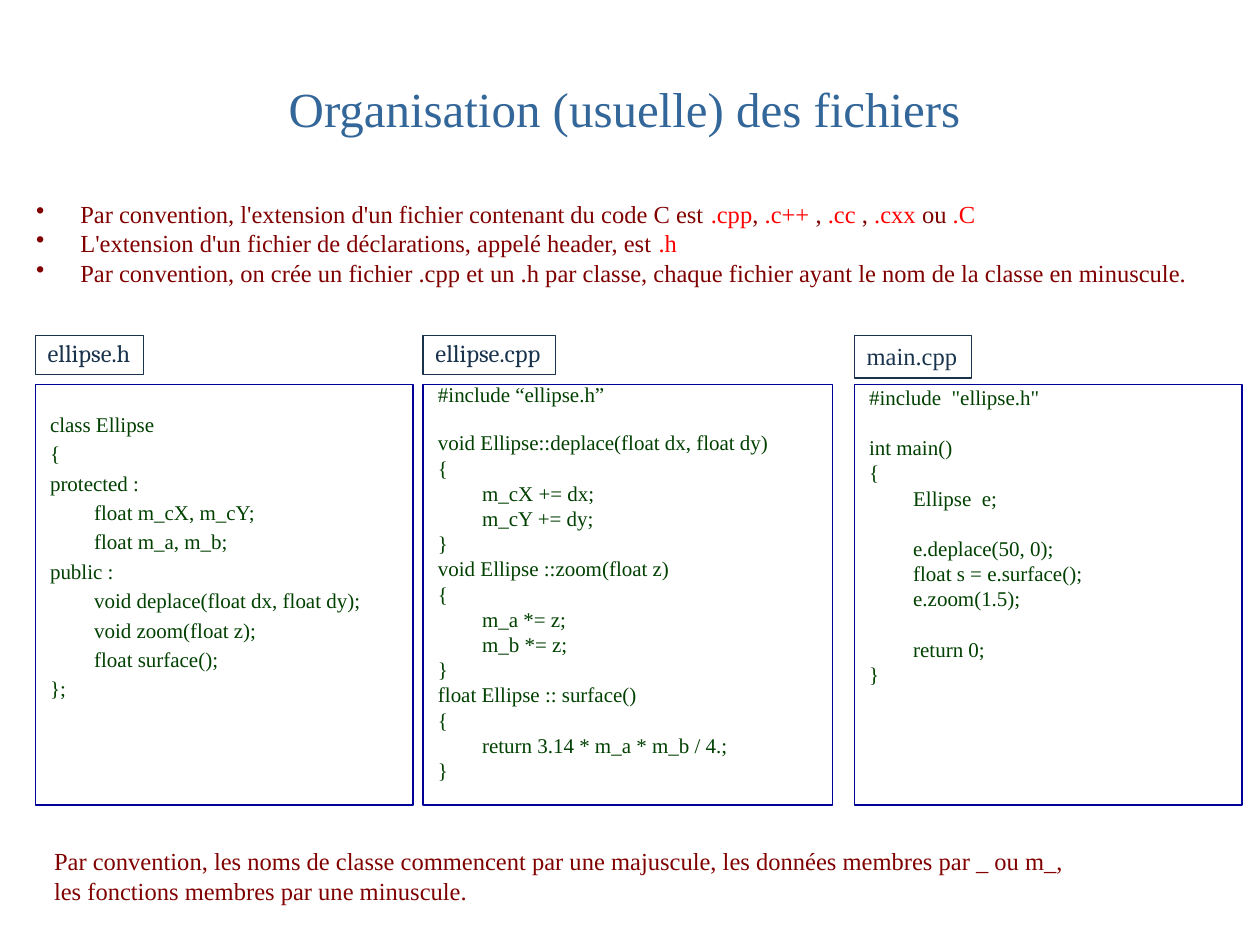
from lxml import etree
from pptx import Presentation
from pptx.dml.color import RGBColor
from pptx.enum.shapes import MSO_SHAPE
from pptx.enum.text import MSO_ANCHOR, MSO_AUTO_SIZE, PP_ALIGN
from pptx.oxml.ns import qn
from pptx.util import Cm, Pt

RECTANGLE = MSO_SHAPE.RECTANGLE
TOP, MIDDLE = MSO_ANCHOR.TOP, MSO_ANCHOR.MIDDLE
LEFT, CENTER = PP_ALIGN.LEFT, PP_ALIGN.CENTER
FIT_SHAPE = MSO_AUTO_SIZE.SHAPE_TO_FIT_TEXT

TITLE_BLUE = RGBColor(0x33, 0x66, 0x99)
MAROON = RGBColor(0x80, 0x00, 0x00)
RED = RGBColor(0xFF, 0x00, 0x00)
CODE_GREEN = RGBColor(0x00, 0x40, 0x00)
BOX_BLUE = RGBColor(0x00, 0x00, 0x99)
LABEL_NAVY = RGBColor(0x19, 0x33, 0x4D)

SERIF, LABEL_FONT = "Times New Roman", "Cambria"
INDENT, HANGING = Cm(1.19), Cm(-0.89)
NO_MARGINS = dict.fromkeys(
    ("margin_left", "margin_top", "margin_right", "margin_bottom"), 0)


def set_values(target, values):
    for name, value in values.items():
        setattr(target, name, value)


def write_paragraph(paragraph, runs, size, font=SERIF, hanging=False, bullet=False, **values):
    """Fill a paragraph with (text, colour) runs; values are paragraph attributes."""
    set_values(paragraph, {"alignment": LEFT, **values})
    for text, color in runs:
        run = paragraph.add_run()
        run.text = text
        set_values(run.font, {"name": font, "size": Pt(size)})
        run.font.color.rgb = color
    properties = paragraph._p.get_or_add_pPr()
    if hanging:
        properties.set("marL", str(INDENT))
        properties.set("indent", str(HANGING))
    if bullet:
        bullet_color = etree.SubElement(properties, qn("a:buClr"))
        etree.SubElement(bullet_color, qn("a:srgbClr"), val=str(MAROON))
        etree.SubElement(properties, qn("a:buChar"), char="•")
    if hanging:
        tabs = etree.SubElement(properties, qn("a:tabLst"))
        etree.SubElement(tabs, qn("a:tab"), pos=str(INDENT), algn="l")


presentation = Presentation()
set_values(presentation, {"slide_width": Cm(25.4), "slide_height": Cm(19.05)})
slide = presentation.slides.add_slide(presentation.slide_layouts[5])

title = slide.shapes.title
set_values(title, {"left": Cm(0.64), "top": Cm(0.43), "width": Cm(23.9), "height": Cm(3.51)})
set_values(title.text_frame, {**NO_MARGINS, "vertical_anchor": MIDDLE})
write_paragraph(title.text_frame.paragraphs[0],
                [("Organisation (usuelle) des fichiers", TITLE_BLUE)], 28, alignment=CENTER)

CONVENTIONS = [
    [("Par convention, l'extension d'un fichier contenant du code C est ", MAROON),
     (".cpp", RED), (",", MAROON), (" .c++ ", RED), (",", MAROON), (" .cc ", RED),
     (",", MAROON), (" .cxx ", RED), ("ou ", MAROON), (".C", RED)],
    [("L'extension d'un fichier de déclarations, appelé header, est ", MAROON), (".h", RED)],
    [("Par convention, on crée un fichier .cpp et un .h par classe, "
      "chaque fichier ayant le nom de la classe en minuscule.", MAROON)],
]
conventions = slide.shapes.add_textbox(Cm(0.43), Cm(4.01), Cm(24.33), Cm(1.7)).text_frame
set_values(conventions, {**NO_MARGINS, "word_wrap": True})
for index, runs in enumerate(CONVENTIONS):
    paragraph = conventions.add_paragraph() if index else conventions.paragraphs[0]
    write_paragraph(paragraph, runs, 14, hanging=True, bullet=True)

HEADER_CODE = """class Ellipse
{
protected :
\tfloat m_cX, m_cY;
\tfloat m_a, m_b;
public :
\tvoid deplace(float dx, float dy);
\tvoid zoom(float z);
\tfloat surface();
};"""
SOURCE_CODE = """#include “ellipse.h”

void Ellipse::deplace(float dx, float dy)
{
\tm_cX += dx;
\tm_cY += dy;
}
void Ellipse ::zoom(float z)
{
\tm_a *= z;
\tm_b *= z;
}
float Ellipse :: surface()
{
\treturn 3.14 * m_a * m_b / 4.;
}"""
MAIN_CODE = """#include  "ellipse.h"

int main()
{
\tEllipse  e;

\te.deplace(50, 0);
\tfloat s = e.surface();
\te.zoom(1.5);

\treturn 0;
}"""

# name, label font, label spacing, left, width, label width, label height,
# top margin, line gap, blank line, first line spacing, code
FILES = [
    ("ellipse.h", LABEL_FONT, 0.9, 0.71, 7.62, 2.18, 0.79, 0.54, 2.4, 0, 1.0, HEADER_CODE),
    ("ellipse.cpp", LABEL_FONT, 0.9, 8.53, 8.26, 2.67, 0.79, 0, 0, 13, 0.9, SOURCE_CODE),
    ("main.cpp", SERIF, 1.0, 17.22, 7.82, 2.36, 0.86, 0, 0, 14.4, 1.0, MAIN_CODE),
]
for (name, label_font, label_spacing, left, width, label_width, label_height,
     top_margin, line_gap, blank_line, first_spacing, code) in FILES:
    box = slide.shapes.add_shape(RECTANGLE, Cm(left), Cm(7.75), Cm(width), Cm(8.48))
    label = slide.shapes.add_shape(RECTANGLE, Cm(left), Cm(6.76),
                                   Cm(label_width), Cm(label_height))
    for shape, color in ((box, BOX_BLUE), (label, LABEL_NAVY)):
        shape.shadow.inherit = False
        shape.fill.background()
        shape.line.color.rgb = color
        shape.line.width = Pt(0.75)
        shape.text_frame.vertical_anchor = TOP

    set_values(label.text_frame, {"word_wrap": False, "auto_size": FIT_SHAPE})
    write_paragraph(label.text_frame.paragraphs[0], [(name, LABEL_NAVY)], 14,
                    font=label_font, line_spacing=label_spacing)

    frame = box.text_frame
    set_values(frame, {**NO_MARGINS, "margin_top": Cm(top_margin), "word_wrap": True})
    space_before, spacing = 0, first_spacing
    paragraph = frame.paragraphs[0]
    for line in code.splitlines():
        if not line:
            space_before += blank_line
            continue
        if paragraph is None:
            paragraph = frame.add_paragraph()
        write_paragraph(paragraph, [(line, CODE_GREEN)], 12, hanging=True,
                        space_before=Pt(space_before), line_spacing=spacing)
        paragraph, space_before, spacing = None, line_gap, 1.0

naming = slide.shapes.add_textbox(Cm(0.84), Cm(16.94), Cm(21.16), Cm(1.45)).text_frame
set_values(naming, {"word_wrap": True, "auto_size": FIT_SHAPE})
write_paragraph(naming.paragraphs[0],
                [("Par convention, les noms de classe commencent par une majuscule, "
                  "les données membres par _ ou m_, "
                  "les fonctions membres par une minuscule.", MAROON)], 14)

presentation.save("out.pptx")
